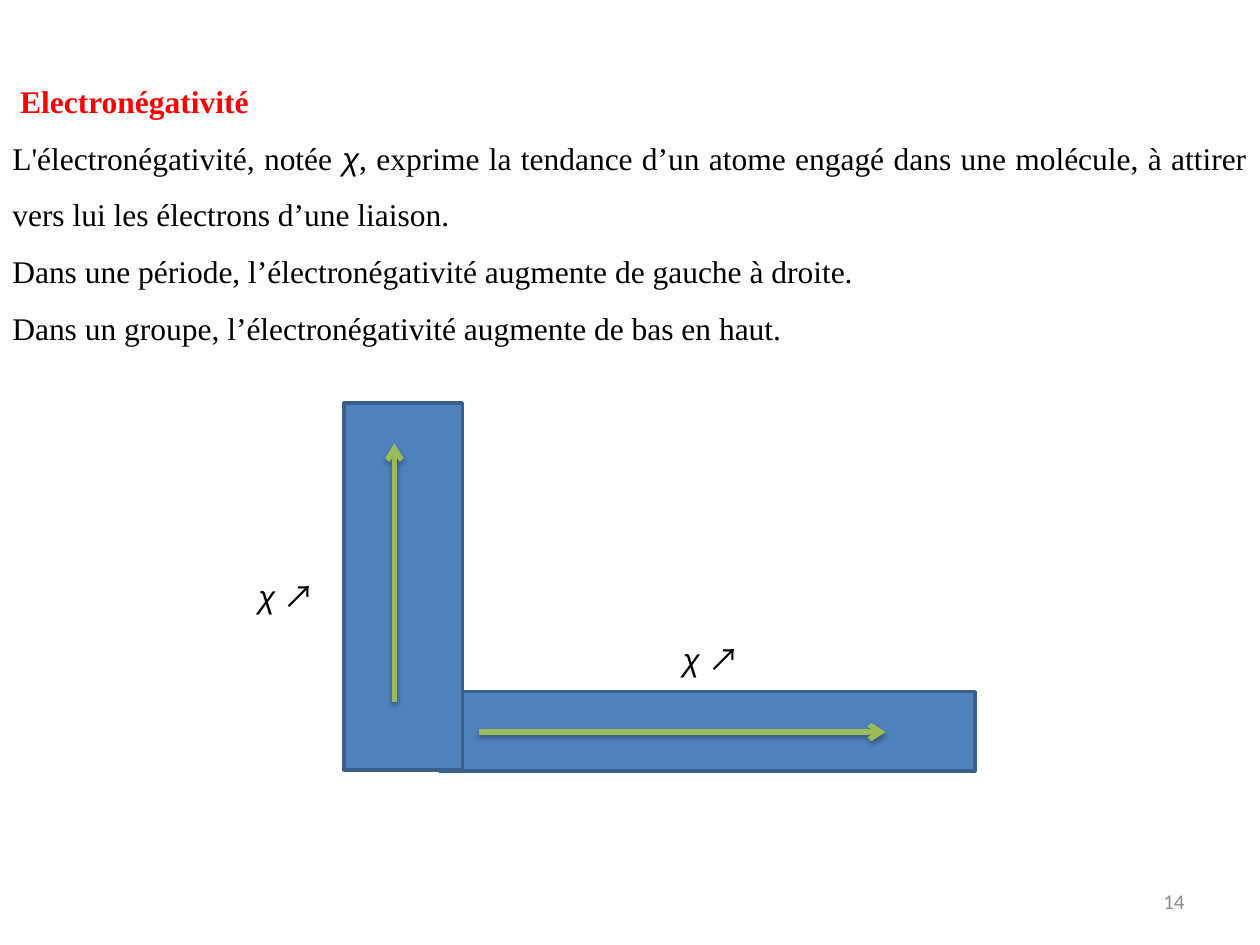
from dataclasses import dataclass

from lxml import etree
from pptx import Presentation
from pptx.dml.color import RGBColor
from pptx.enum.shapes import MSO_CONNECTOR, MSO_SHAPE
from pptx.enum.text import MSO_ANCHOR, PP_ALIGN
from pptx.oxml.ns import qn
from pptx.slide import Slide
from pptx.util import Inches, Pt

RECTANGLE = MSO_SHAPE.RECTANGLE
STRAIGHT = MSO_CONNECTOR.STRAIGHT
TOP, MIDDLE = MSO_ANCHOR.TOP, MSO_ANCHOR.MIDDLE
LEFT, RIGHT, JUSTIFY = PP_ALIGN.LEFT, PP_ALIGN.RIGHT, PP_ALIGN.JUSTIFY


def color(value):
    """Turn a hex string into a colour."""
    return RGBColor.from_string(value)


@dataclass
class Board:
    """Style and current slide, measured in grid cells of a tenth of an inch."""

    slide: Slide
    cell: float = 0.1
    serif: str = "Times New Roman"
    symbol: str = "Arial"
    arrow_glyph: str = "Noto Sans CJK SC"
    ink: str = "000000"
    title: str = "FF0000"
    muted: str = "8C8C8C"
    bar_fill: str = "4F81BD"
    bar_edge: str = "3A5F8C"
    arrow_line: str = "9BBB59"

    def grid(self, *cells):
        """Convert grid cells into lengths."""
        return [Inches(count * self.cell) for count in cells]

    def text(self, area, lines, align=LEFT, anchor=TOP, spacing=1.0, wrap=True):
        """Write lines given as (runs, size, colour, bold), runs as (text, font, italic)."""
        frame = self.slide.shapes.add_textbox(*self.grid(*area)).text_frame
        frame.word_wrap = wrap
        frame.vertical_anchor = anchor
        for index, (runs, size, ink, bold) in enumerate(lines):
            line = frame.add_paragraph() if index else frame.paragraphs[0]
            line.alignment = align
            line.line_spacing = spacing
            line.font.size = Pt(size)
            line.font.bold = bold
            line.font.color.rgb = color(ink)
            for wording, font, italic in runs:
                part = line.add_run()
                part.text = wording
                part.font.name = font
                part.font.italic = italic

    def bar(self, *area):
        """Draw a filled bar of the table outline."""
        bar = self.slide.shapes.add_shape(RECTANGLE, *self.grid(*area))
        bar.shadow.inherit = False
        bar.fill.solid()
        bar.fill.fore_color.rgb = color(self.bar_fill)
        bar.line.color.rgb = color(self.bar_edge)
        bar.line.width = Pt(2)

    def arrow(self, *ends):
        """Draw an arrow with a soft shadow below it."""
        arrow = self.slide.shapes.add_connector(STRAIGHT, *self.grid(*ends))
        arrow.line.color.rgb = color(self.arrow_line)
        arrow.line.width = Pt(3)
        etree.SubElement(arrow.line._get_or_add_ln(), qn("a:tailEnd"), type="arrow")
        effects = etree.SubElement(arrow._element.spPr, qn("a:effectLst"))
        shadow = etree.SubElement(
            effects, qn("a:outerShdw"), blurRad=str(Pt(3.1)), dist=str(Pt(1.8)),
            dir="5400000", rotWithShape="0")
        shade = etree.SubElement(shadow, qn("a:srgbClr"), val=self.ink)
        etree.SubElement(shade, qn("a:alpha"), val="35000")

    def trend(self, column, row):
        """Label a bar with rising electronegativity."""
        runs = [("χ ", self.symbol, True), ("↗", self.arrow_glyph, False)]
        self.text((column, row, 6.6, 4), [(runs, 18, self.ink, False)], wrap=False)


def main():
    """Build the electronegativity slide."""
    deck = Presentation()
    deck.slide_width, deck.slide_height = Inches(10), Inches(7.5)
    board = Board(deck.slides.add_slide(deck.slide_layouts[6]))
    serif = board.serif

    definition = [
        ("L'électronégativité, notée ", serif, False),
        ("χ", board.symbol, True),
        (", exprime la tendance d’un atome engagé dans une molécule, à attirer "
         "vers lui les électrons d’une liaison. ", serif, False),
    ]
    period = [("Dans une période, l’électronégativité augmente de gauche à droite.",
               serif, False)]
    group = [("Dans un groupe, l’électronégativité augmente de bas en haut.",
              serif, False)]
    lines = [([(" Electronégativité", serif, False)], 18, board.title, True)]
    lines += [(runs, 18, board.ink, False) for runs in (definition, period, group)]
    board.text((0, 4.4, 100, 23.7), lines, JUSTIFY, MIDDLE, 1.5)

    number = [("14", "Calibri", False)]
    board.text((71.7, 69.5, 23.3, 4), [(number, 12, board.muted, False)], RIGHT, MIDDLE)

    board.bar(34.9, 54.9, 42.5, 6.3)
    board.bar(27.3, 32, 9.4, 29.1)
    board.arrow(31.3, 55.7, 31.3, 35.2)
    board.arrow(38, 58.1, 70.3, 58.1)
    board.trend(19.5, 45.3)
    board.trend(53.2, 50.3)

    deck.save("out.pptx")


if __name__ == "__main__":
    main()
